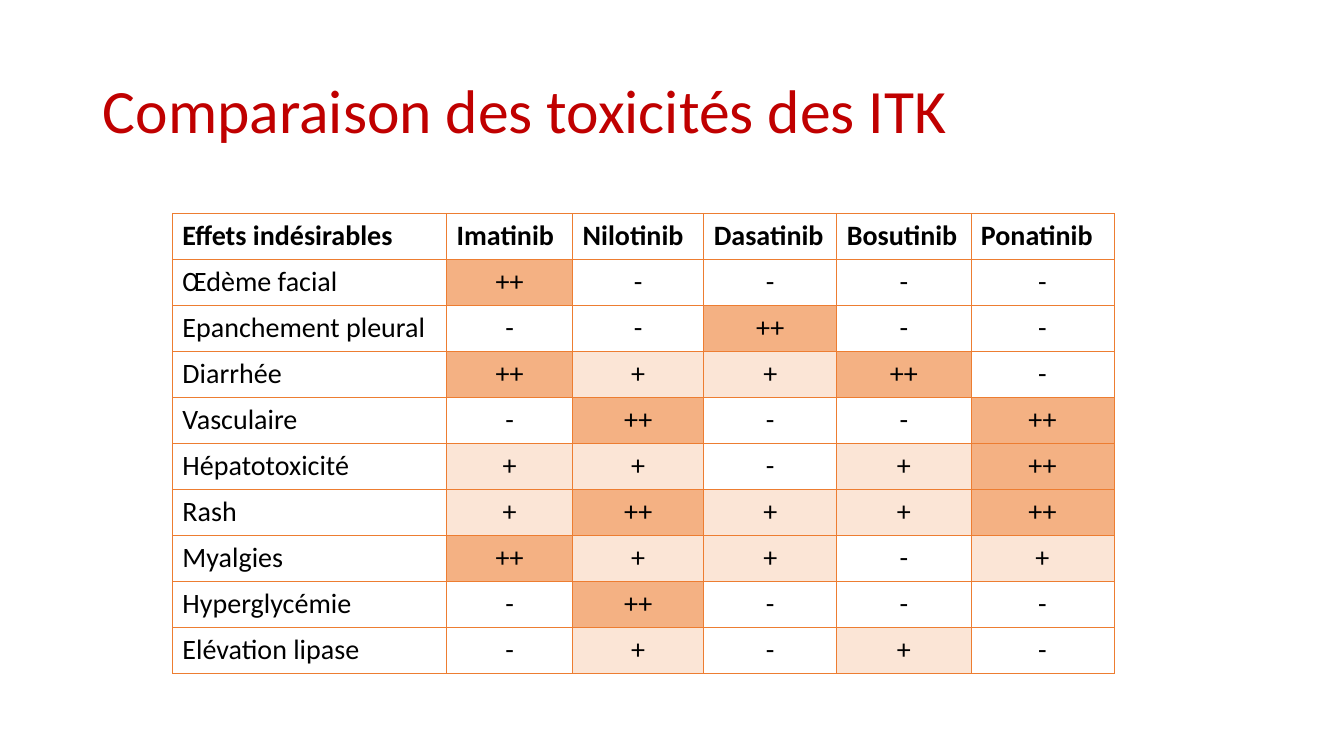
import pptx
import pptx.dml.color
import pptx.enum.text
import pptx.oxml
import pptx.oxml.ns
import pptx.util

Inches = pptx.util.Inches
Pt = pptx.util.Pt
RGBColor = pptx.dml.color.RGBColor
PP_ALIGN = pptx.enum.text.PP_ALIGN
MSO_ANCHOR = pptx.enum.text.MSO_ANCHOR

RED = RGBColor(0xC0, 0x00, 0x00)
BLACK = RGBColor(0x00, 0x00, 0x00)
ORANGE = RGBColor(0xED, 0x7D, 0x31)
STRONG = RGBColor(0xF4, 0xB1, 0x83)
MILD = RGBColor(0xFB, 0xE5, 0xD6)

GRADE_FILLS = {"++": STRONG, "+": MILD}
DRUGS = ["Imatinib", "Nilotinib", "Dasatinib", "Bosutinib", "Ponatinib"]
TOXICITIES = [
    ("Œdème facial", "++ - - - -"),
    ("Epanchement pleural", "- - ++ - -"),
    ("Diarrhée", "++ + + ++ -"),
    ("Vasculaire", "- ++ - - ++"),
    ("Hépatotoxicité", "+ + - + ++"),
    ("Rash", "+ ++ + + ++"),
    ("Myalgies", "++ + + - +"),
    ("Hyperglycémie", "- ++ - - -"),
    ("Elévation lipase", "- + - + -"),
]
COLUMN_WIDTHS = [2.72, 1.25, 1.3, 1.32, 1.33, 1.42]


class SlideBuilder:
    font = "Calibri"

    def __init__(self, slide):
        self.slide = slide

    def add_text(self, paragraph, text, size, color, bold=False):
        run = paragraph.add_run()
        run.text = text
        run.font.name = self.font
        run.font.size = Pt(size)
        run.font.bold = bold
        run.font.color.rgb = color

    def title(self, text, left, top, width, height):
        heading = self.slide.shapes.title
        heading.left, heading.top = Inches(left), Inches(top)
        heading.width, heading.height = Inches(width), Inches(height)
        heading.text_frame.vertical_anchor = MSO_ANCHOR.MIDDLE
        paragraph = heading.text_frame.paragraphs[0]
        paragraph.alignment = PP_ALIGN.LEFT
        paragraph.line_spacing = 0.9
        self.add_text(paragraph, text, 44, RED)

    def border(self, cell):
        properties = cell._tc.get_or_add_tcPr()
        for side in "LRTB":
            properties.append(pptx.oxml.parse_xml(
                f'<a:ln{side} {pptx.oxml.ns.nsdecls("a")} w="{Pt(0.5)}">'
                f'<a:solidFill><a:srgbClr val="{ORANGE}"/></a:solidFill>'
                f'</a:ln{side}>'))

    def cell(self, cell, text, header, grade):
        self.border(cell)
        if grade and text in GRADE_FILLS:
            cell.fill.solid()
            cell.fill.fore_color.rgb = GRADE_FILLS[text]
        else:
            cell.fill.background()
        paragraph = cell.text_frame.paragraphs[0]
        paragraph.alignment = PP_ALIGN.CENTER if grade else PP_ALIGN.LEFT
        self.add_text(paragraph, text, 20, BLACK, header)

    def table(self, rows, widths, left, top, height):
        grid = self.slide.shapes.add_table(
            len(rows), len(widths), Inches(left), Inches(top),
            Inches(sum(widths)), Inches(height)).table
        grid.first_row = False
        grid.horz_banding = False
        for column, width in zip(grid.columns, widths):
            column.width = Inches(width)
        for r, texts in enumerate(rows):
            for c, text in enumerate(texts):
                self.cell(grid.cell(r, c), text, r == 0, r > 0 and c > 0)


def main():
    deck = pptx.Presentation()
    deck.slide_width, deck.slide_height = Inches(13.33), Inches(7.5)
    builder = SlideBuilder(deck.slides.add_slide(deck.slide_layouts[5]))
    builder.title("Comparaison des toxicités des ITK", 0.92, 0.4, 11.5, 1.45)
    rows = [["Effets indésirables", *DRUGS]]
    rows += [[effect, *grades.split()] for effect, grades in TOXICITIES]
    builder.table(rows, COLUMN_WIDTHS, 1.71, 2.12, 4.56)
    deck.save("out.pptx")


if __name__ == "__main__":
    main()
